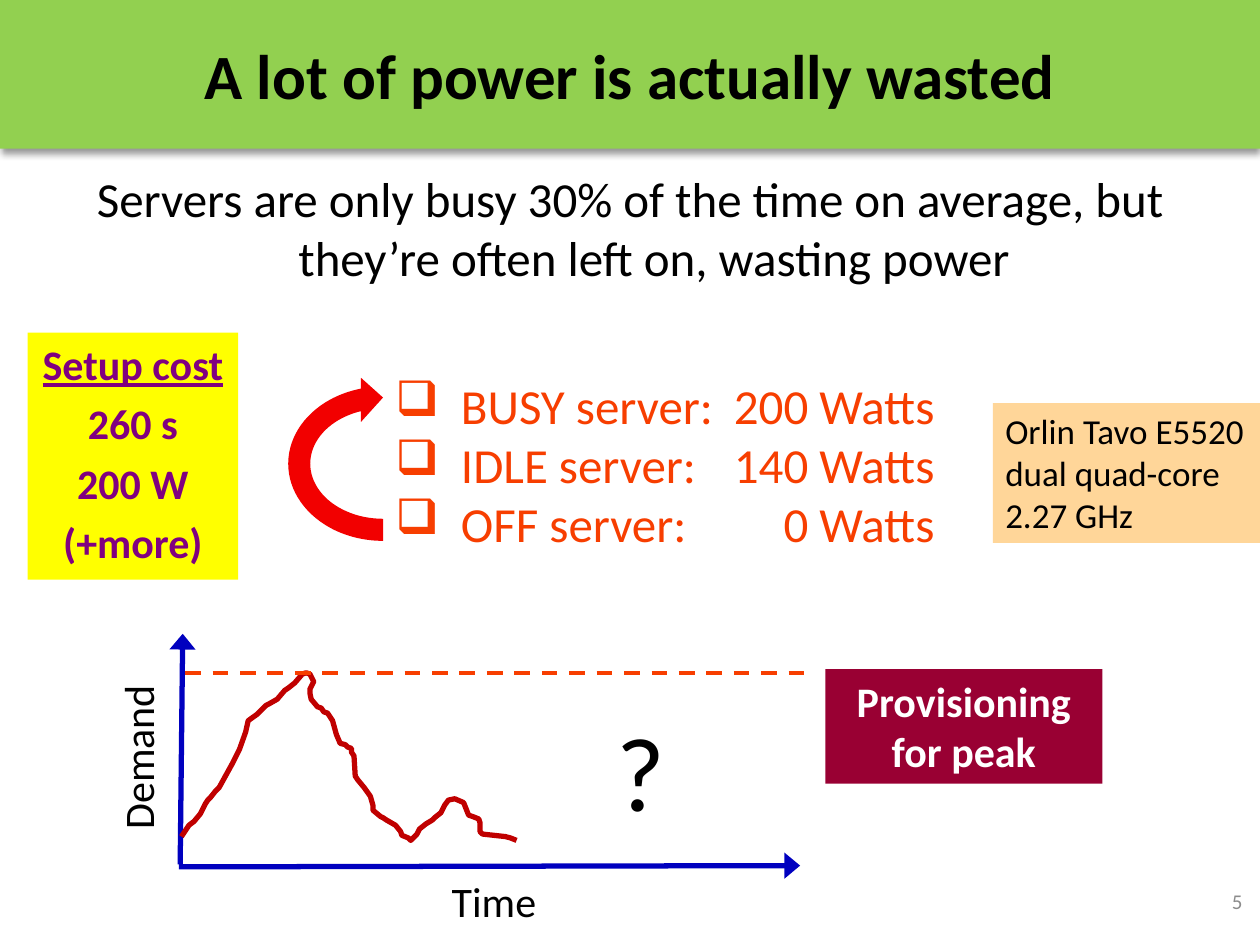
from lxml import etree
from pptx import Presentation
from pptx.dml.color import RGBColor
from pptx.enum.dml import MSO_LINE
from pptx.enum.shapes import MSO_CONNECTOR, MSO_SHAPE
from pptx.enum.text import MSO_ANCHOR, MSO_AUTO_SIZE, PP_ALIGN
from pptx.oxml.ns import qn
from pptx.util import Pt

PX = 9144  # 100 px to the inch
LEFT, CENTER, RIGHT = PP_ALIGN.LEFT, PP_ALIGN.CENTER, PP_ALIGN.RIGHT
TOP, MIDDLE = MSO_ANCHOR.TOP, MSO_ANCHOR.MIDDLE
RECT, CIRCULAR_ARROW = MSO_SHAPE.RECTANGLE, MSO_SHAPE.CIRCULAR_ARROW
STRAIGHT = MSO_CONNECTOR.STRAIGHT
DASH = MSO_LINE.DASH
NO_FIT = MSO_AUTO_SIZE.NONE

COLORS = {
    "black": "000000", "white": "FFFFFF", "gray": "8C8C8C",
    "green": "92D050", "yellow": "FFFF00", "purple": "800080",
    "orange": "F73E00", "peach": "FFD699", "red": "F20000",
    "blue": "0000BF", "curve": "C00000", "maroon": "990033",
}
RGB = {name: RGBColor.from_string(value) for name, value in COLORS.items()}


def put_text(sp, box, lines, size, color="black", align=CENTER, bold=False,
             fill=None, wrap=True, anchor=TOP, rotation=0, space=0):
    """Place a shape and write its paragraphs in one format."""
    sp.left, sp.top, sp.width, sp.height = [v * PX for v in box]
    sp.rotation = rotation
    if fill:
        sp.fill.solid()
        sp.fill.fore_color.rgb = RGB[fill]
        sp.line.fill.background()
    tf = sp.text_frame
    tf.text = "\n".join(lines)
    for name, value in {"word_wrap": wrap, "auto_size": NO_FIT,
                        "vertical_anchor": anchor}.items():
        setattr(tf, name, value)
    for i, p in enumerate(tf.paragraphs):
        p.alignment = align
        p.space_before = Pt(space if i else 0)
        for r in p.runs:
            for name, value in {"name": "Calibri", "size": Pt(size), "bold": bold}.items():
                setattr(r.font, name, value)
            r.font.color.rgb = RGB[color]
    return tf


def add_line(start, end, color, width):
    """Draw a straight line without a shadow."""
    line = shapes.add_connector(STRAIGHT, *[v * PX for v in start + end])
    line.line.color.rgb = RGB[color]
    line.line.width = Pt(width)
    etree.SubElement(line._element.spPr, qn("a:effectLst"))
    return line


prs = Presentation()
prs.slide_width, prs.slide_height = 1000 * PX, 750 * PX
s = prs.slides.add_slide(prs.slide_layouts[1])
shapes = s.shapes

# Title band with a soft shadow
title = shapes.title
put_text(title, (0, 0, 1000, 118), ["A lot of power is actually wasted"], 36,
         bold=True, fill="green", anchor=MIDDLE)
effects = etree.SubElement(title._element.spPr, qn("a:effectLst"))
shadow = etree.SubElement(effects, qn("a:outerShdw"), blurRad=str(Pt(4)),
                          dist=str(Pt(3)), dir="5400000", rotWithShape="0")
tint = etree.SubElement(shadow, qn("a:srgbClr"), val=COLORS["black"])
etree.SubElement(tint, qn("a:alpha"), val="40000")

# Main statement
tf = put_text(s.placeholders[1], (59, 129, 882, 107),
              ["Servers are only busy 30% of the time on average, "
               "but they’re often left on, wasting power"], 28)
pPr = tf.paragraphs[0]._p.get_or_add_pPr()
pPr.set("marL", str(38 * PX))
pPr.set("indent", str(-38 * PX))
etree.SubElement(pPr, qn("a:buNone"))

# Filled boxes
panels = [
    ((22, 264, 167, 196), ["Setup cost", "260 s", "200 W", "(+more)"], 24,
     {"color": "purple", "bold": True, "fill": "yellow", "space": 5}),
    ((788, 320, 212, 111), ["Orlin Tavo E5520", "dual quad-core", "2.27 GHz"], 20,
     {"align": LEFT, "fill": "peach", "wrap": False}),
    ((655, 531, 220, 91), ["Provisioning for peak"], 24,
     {"color": "white", "bold": True, "fill": "maroon"}),
]
for box, lines, size, style in panels:
    sp = shapes.add_shape(RECT, 0, 0, PX, PX)
    sp.shadow.inherit = False
    tf = put_text(sp, box, lines, size, **style)
    if lines[0] == "Setup cost":
        tf.paragraphs[0].runs[0].font.underline = True

# Server states: bullet, name, right-aligned power
states = [("BUSY", 200), ("IDLE", 140), ("OFF", 0)]
tf = put_text(shapes.add_textbox(0, 0, PX, PX), (304, 293, 482, 151),
              [f"\t{state} server:\t{watts} Watts" for state, watts in states],
              28, color="orange", align=LEFT)
for p in tf.paragraphs:
    pPr = p._p.get_or_add_pPr()
    pPr.set("marL", "0")
    pPr.set("indent", "0")
    etree.SubElement(pPr, qn("a:buChar"), char="❑")
    tabs = etree.SubElement(pPr, qn("a:tabLst"))
    for pos, side in [(52, "l"), (448, "r")]:
        etree.SubElement(tabs, qn("a:tab"), pos=str(pos * PX), algn=side)

# Arrow from OFF back to BUSY
arrow = shapes.add_shape(CIRCULAR_ARROW, 234 * PX, 284 * PX, 140 * PX, 168 * PX)
arrow.rotation = 270
arrow.shadow.inherit = False
arrow.fill.solid()
arrow.fill.fore_color.rgb = RGB["red"]
arrow.line.fill.background()

# Axes
for start, end in [((142, 688), (635, 687)), ((143, 686), (145, 503))]:
    axis = add_line(start, end, "blue", 3)
    etree.SubElement(axis.line._get_or_add_ln(), qn("a:tailEnd"),
                     type="triangle", w="lg", len="med")

# Demand curve
demand = [
    (144, 664), (150, 655), (154, 652), (159, 646), (163, 638), (165, 635),
    (167, 633), (171, 628), (174, 625), (185, 605), (190, 595), (195, 581),
    (197, 572), (204, 567), (211, 560), (213, 559), (220, 555), (226, 548),
    (229, 546), (234, 542), (240, 535), (243, 534), (246, 535), (249, 541),
    (246, 547), (246, 550), (247, 555), (252, 561), (255, 562), (257, 565),
    (260, 566), (262, 569), (264, 572), (267, 583), (270, 590), (274, 591),
    (276, 593), (279, 594), (279, 597), (281, 600), (282, 616), (284, 619),
    (289, 625), (294, 632), (296, 639), (296, 643), (302, 648), (304, 649),
    (307, 651), (314, 655), (318, 660), (319, 663), (324, 665), (326, 667),
    (331, 662), (333, 658), (338, 654), (343, 651), (345, 649), (350, 645),
    (353, 639), (356, 635), (361, 634), (368, 637), (372, 647), (375, 648),
    (380, 650), (381, 653), (381, 660), (383, 662), (401, 664), (405, 665),
    (410, 667),
]
builder = shapes.build_freeform(*demand[0], scale=PX)
builder.add_line_segments(demand[1:], close=False)
curve = builder.convert_to_shape()
curve.shadow.inherit = False
curve.fill.background()
curve.line.color.rgb = RGB["curve"]
curve.line.width = Pt(3)

# Peak level
add_line((147, 534), (647, 534), "orange", 2.25).line.dash_style = DASH

# Chart labels and page number
labels = [
    ((300, 690, 184, 50), "Time", 24, {}),
    ((35, 576, 148, 50), "Demand", 24, {"rotation": 270}),
    ((442, 556, 133, 111), "?", 60, {}),
    ((763, 695, 233, 40), "5", 12, {"color": "gray", "align": RIGHT, "anchor": MIDDLE}),
]
for box, text, size, style in labels:
    put_text(shapes.add_textbox(0, 0, PX, PX), box, [text], size, **style)

prs.save("out.pptx")
